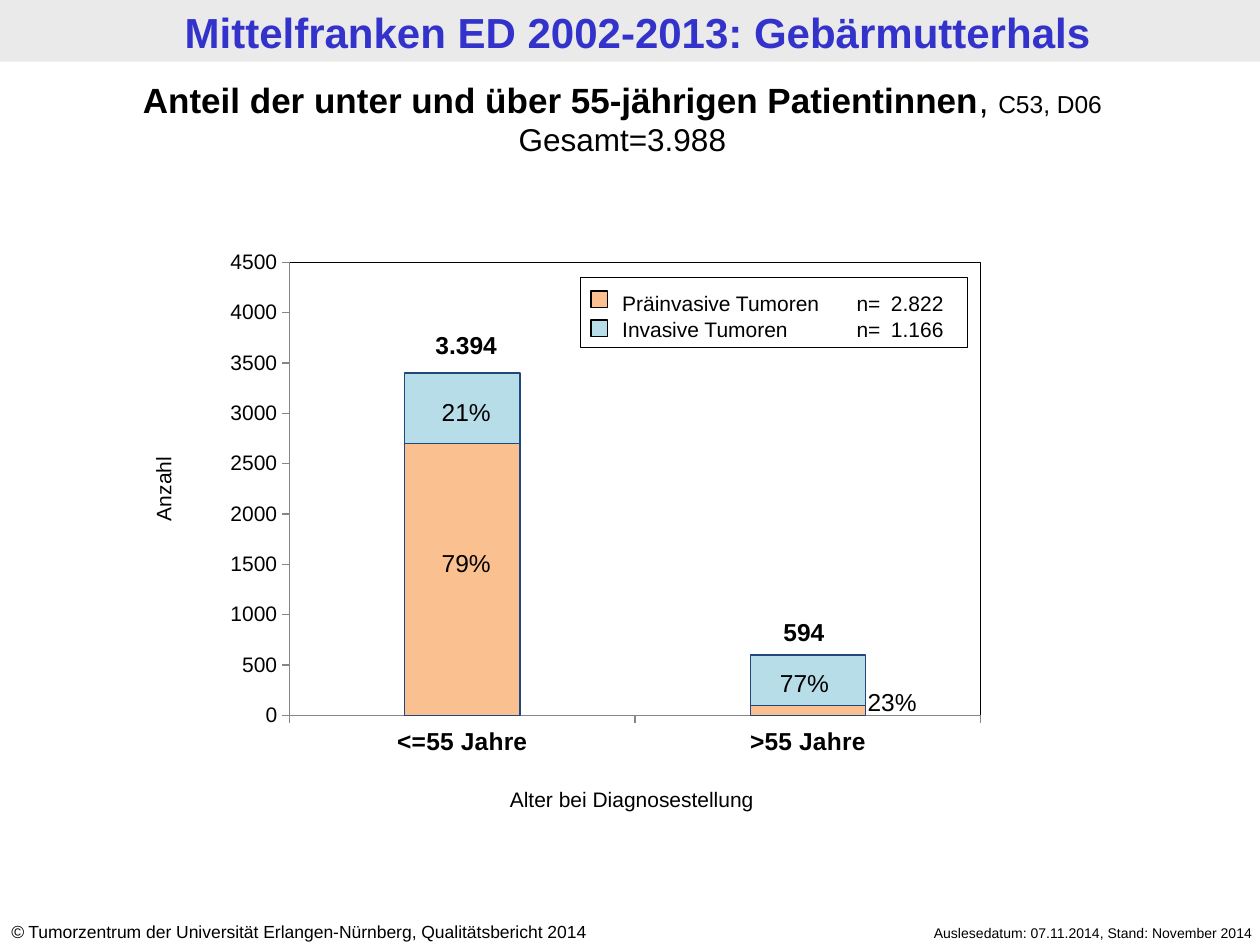
from lxml import etree
from pptx import Presentation
from pptx.chart.data import CategoryChartData
from pptx.dml.color import RGBColor
from pptx.enum import chart as charts, shapes, text
from pptx.oxml import parse_xml
from pptx.oxml.ns import nsdecls, qn
from pptx.util import Inches, Pt

BLACK = RGBColor(0, 0, 0)
BAND_GRAY = RGBColor(0xEA, 0xEA, 0xEA)
AXIS_GRAY = RGBColor(0x86, 0x86, 0x86)
TITLE_BLUE = RGBColor(0x33, 0x33, 0xCC)
BAR_EDGE = RGBColor(0x1F, 0x49, 0x7D)
ORANGE = RGBColor(0xFA, 0xC0, 0x90)
LIGHT_BLUE = RGBColor(0xB7, 0xDE, 0xE8)

LEFT, CENTER, RIGHT = text.PP_ALIGN.LEFT, text.PP_ALIGN.CENTER, text.PP_ALIGN.RIGHT

TITLE = "Mittelfranken ED 2002-2013: Gebärmutterhals"
CATEGORIES = ["<=55 Jahre", ">55 Jahre"]
# name, values, color, count, top of the legend key
SERIES = [
    ("Präinvasive Tumoren", (2700, 100), ORANGE, "2.822", 2.31),
    ("Invasive Tumoren", (700, 500), LIGHT_BLUE, "1.166", 2.54),
]
PLOT_LAYOUT = {"x": 0.113, "y": 0.142, "w": 0.786, "h": 0.772}

# text, left, top, width, height, size, bold, rotation
CHART_LABELS = [
    ("79%", 3.19, 4.3, 1.02, 0.34, 14, False, 0),
    ("594", 5.87, 4.85, 1.02, 0.34, 14, True, 0),
    ("3.394", 3.19, 2.57, 1.02, 0.34, 14, True, 0),
    ("77%", 5.79, 5.25, 1.19, 0.34, 14, False, 0),
    ("21%", 3.19, 3.1, 1.02, 0.34, 14, False, 0),
    ("23%", 6.57, 5.4, 1.02, 0.34, 14, False, 0),
    ("Alter bei Diagnosestellung", 3.35, 6.19, 3.33, 0.3, 12, False, 0),
    ("Anzahl", -0.01, 3.73, 2.61, 0.3, 12, False, 270),
]


def style_font(font, size, color=BLACK, bold=False):
    font.name = "Arial"
    font.size = Pt(size)
    font.bold = bold
    font.color.rgb = color


def add_text(slide, lines, box, size, bold=False, align=CENTER):
    """Add a text box with one paragraph for each line."""
    shape = slide.shapes.add_textbox(*map(Inches, box))
    frame = shape.text_frame
    frame.word_wrap = True
    frame.text = "\n".join(lines)
    for paragraph in frame.paragraphs:
        paragraph.alignment = align
        style_font(paragraph.font, size, bold=bold)
    return shape


def add_rectangle(slide, box, fill=None, line=None):
    shape = slide.shapes.add_shape(shapes.MSO_SHAPE.RECTANGLE, *map(Inches, box))
    shape.shadow.inherit = False
    if fill is None:
        shape.fill.background()
    else:
        shape.fill.solid()
        shape.fill.fore_color.rgb = fill
    if line is None:
        shape.line.fill.background()
    else:
        shape.line.color.rgb = line
        shape.line.width = Pt(0.75)


def add_header(slide):
    add_rectangle(slide, (0, 0, 10, 0.49), fill=BAND_GRAY)
    title = slide.shapes.title
    slide.shapes._spTree.append(title._element)  # bring in front of the band
    title.left, title.top, title.width, title.height = map(Inches, (0.06, 0.01, 10, 0.49))
    frame = title.text_frame
    frame.text = TITLE
    frame.vertical_anchor = text.MSO_ANCHOR.TOP
    frame.margin_top = frame.margin_bottom = Inches(0.04)
    frame.paragraphs[0].alignment = CENTER
    style_font(frame.paragraphs[0].font, 24, TITLE_BLUE, bold=True)


def add_subtitle(slide):
    shape = add_text(slide, ["", "Gesamt=3.988"], (0, 0.57, 9.88, 0.74), 18)
    heading = shape.text_frame.paragraphs[0]
    for words, size, bold in [
        ("Anteil der unter und über 55-jährigen Patientinnen", 20, True),
        (", ", 20, False),
        ("C53, D06", 14, False),
    ]:
        run = heading.add_run()
        run.text = words
        style_font(run.font, size, bold=bold)


def frame_plot_area(chart):
    """Fix the inner plot area and give it a thin black border."""
    plot_area = chart._chartSpace.chart.plotArea
    for layout in plot_area.findall(qn("c:layout")):
        plot_area.remove(layout)
    layout = etree.Element(qn("c:layout"))
    manual = etree.SubElement(layout, qn("c:manualLayout"))
    settings = {"layoutTarget": "inner", "xMode": "edge", "yMode": "edge", **PLOT_LAYOUT}
    for tag, value in settings.items():
        etree.SubElement(manual, qn(f"c:{tag}")).set("val", str(value))
    plot_area.insert(0, layout)
    plot_area.append(parse_xml(
        f'<c:spPr {nsdecls("c", "a")}><a:noFill/><a:ln w="9525"><a:solidFill>'
        f'<a:srgbClr val="{BLACK}"/></a:solidFill></a:ln></c:spPr>'
    ))


def add_age_chart(slide):
    data = CategoryChartData()
    data.categories = CATEGORIES
    for name, values, *_ in SERIES:
        data.add_series(name, values)
    chart = slide.shapes.add_chart(
        charts.XL_CHART_TYPE.COLUMN_STACKED,
        *map(Inches, (1.51, 1.42, 6.98, 4.66)), data,
    ).chart
    chart.has_legend = chart.has_title = False
    chart.font.name = "Calibri"
    chart.font.size = Pt(18)
    chart.font.color.rgb = BLACK

    plot = chart.plots[0]
    plot.gap_width, plot.overlap = 200, 100
    plot.vary_by_categories = False
    for series, (_, _, color, *_) in zip(plot.series, SERIES):
        series.format.fill.solid()
        series.format.fill.fore_color.rgb = color
        series.format.line.color.rgb = BAR_EDGE
        series.format.line.width = Pt(0.75)

    for axis, size, bold in [(chart.category_axis, 14, True), (chart.value_axis, 12, False)]:
        axis.has_major_gridlines = False
        axis.major_tick_mark = charts.XL_TICK_MARK.OUTSIDE
        axis.minor_tick_mark = charts.XL_TICK_MARK.NONE
        axis.format.line.color.rgb = AXIS_GRAY
        style_font(axis.tick_labels.font, size, bold=bold)
    chart.value_axis.minimum_scale = 0
    chart.value_axis.maximum_scale = 4500
    chart.value_axis.major_unit = 500
    frame_plot_area(chart)


def add_legend(slide):
    lines = [f"{name}\tn=\t{count}" for name, _, _, count, _ in SERIES]
    shape = add_text(slide, lines, (4.84, 2.26, 2.8, 0.5), 12, align=LEFT)
    for paragraph in shape.text_frame.paragraphs:
        tabs = etree.Element(qn("a:tabLst"))
        for position, align in [(1.86, "l"), (2.55, "r")]:
            etree.SubElement(tabs, qn("a:tab"), pos=str(Inches(position)), algn=align)
        paragraph._p.get_or_add_pPr().insert(0, tabs)
    add_rectangle(slide, (4.61, 2.2, 3.07, 0.56), line=BLACK)
    for _, _, color, _, top in SERIES:
        add_rectangle(slide, (4.69, top, 0.13, 0.13), color, BLACK)


def add_footer(slide):
    add_text(slide, ["Auslesedatum: 07.11.2014, Stand: November 2014"],
             (6.65, 7.29, 3.39, 0.24), 8, align=RIGHT)
    source = add_text(slide, [""], (-0.01, 7.26, 5.24, 0.27), 10, align=LEFT)
    paragraph = source.text_frame.paragraphs[0]
    for words, italic in [
        ("©", True),
        (" Tumorzentrum der Universität Erlangen-Nürnberg, Qualitätsbericht 2014", False),
    ]:
        run = paragraph.add_run()
        run.text = words
        run.font.italic = italic


def main():
    presentation = Presentation()
    presentation.slide_width, presentation.slide_height = Inches(10), Inches(7.5)
    slide = presentation.slides.add_slide(presentation.slide_layouts[5])
    add_header(slide)
    add_footer(slide)
    add_age_chart(slide)
    add_subtitle(slide)
    for label, left, top, width, height, size, bold, rotation in CHART_LABELS:
        shape = add_text(slide, [label], (left, top, width, height), size, bold)
        shape.rotation = rotation
    add_legend(slide)
    presentation.save("out.pptx")


if __name__ == "__main__":
    main()
